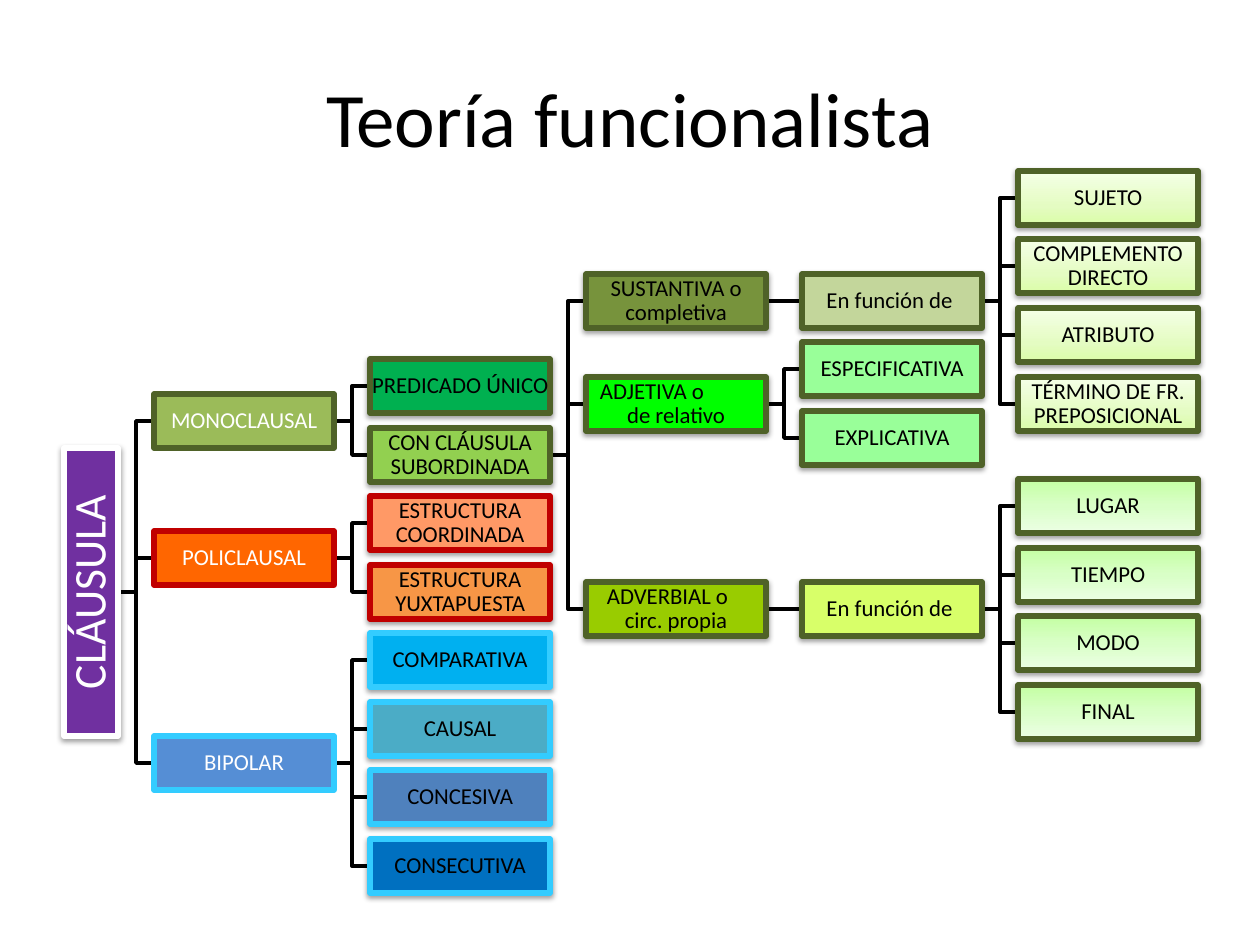
from copy import deepcopy
from dataclasses import dataclass
from typing import Iterator

from lxml.etree import SubElement
from pptx import Presentation
from pptx.dml.color import RGBColor
from pptx.enum.shapes import MSO_CONNECTOR, MSO_SHAPE
from pptx.enum.text import MSO_ANCHOR, PP_ALIGN
from pptx.oxml.ns import qn
from pptx.util import Emu, Pt

# Layout, in px (126 to the inch)
EMU_PER_PX = 914400 / 126
SLIDE_W, SLIDE_H = 1260, 945
BOX_W, BOX_H = 180, 54
ROOT_LENGTH, ROOT_CENTRE_X = 288, 91
FIRST_COLUMN, COLUMN_PITCH = 154, 216
FIRST_ROW, TWO_ROWS = 198, 137

COLORS = {
    "black": "000000", "white": "FFFFFF", "purple": "7030A0",
    "olive_line": "4F6228", "red_line": "C00000", "sky_line": "33CCFF",
    "mono": "9BBB59", "single": "00B050", "subordinate": "92D050",
    "noun": "77933C", "noun_role": "C3D69B", "adjective": "00FF00",
    "relative": "99FF99", "adverb": "99CC00", "adverb_role": "D8FF69",
    "poly": "FF6600", "coordinated": "FF9966", "juxtaposed": "F79646",
    "bipolar": "558ED5", "comparative": "00B0F0", "causal": "4BACC6",
    "concessive": "4F81BD", "consecutive": "0070C0",
    "lime_0": "DAFDA7", "lime_1": "E4FCC2", "lime_2": "F5FFE7",
    "mint_0": "C4FFA3", "mint_1": "D9FFC7", "mint_2": "ECFFE4",
}


@dataclass(frozen=True)
class Gradient:
    stops: tuple[tuple[float, str], ...]
    angle: int


LIME = Gradient(((0, "lime_0"), (0.35, "lime_1"), (1, "lime_2")), 90)
MINT = Gradient(((0, "mint_0"), (0.5, "mint_1"), (1, "mint_2")), 270)


@dataclass(frozen=True)
class Clause:
    """A tree node; leaves have a row, parents sit midway between their children."""
    text: str
    fill: str | Gradient
    line: str = "olive_line"
    children: tuple["Clause", ...] = ()
    leaf_row: float = 0
    ink: str = "black"
    shadow: bool = True
    first_line_indent: int = 0

    @property
    def row(self) -> float:
        if not self.children:
            return self.leaf_row
        return (self.children[0].row + self.children[-1].row) / 2

    @property
    def centre_y(self) -> int:
        return round(FIRST_ROW + TWO_ROWS * self.row / 2)


def leaves(start: float, line: str, *entries: tuple[str, str | Gradient]) -> tuple[Clause, ...]:
    return tuple(Clause(text, fill, line, leaf_row=start + i)
                 for i, (text, fill) in enumerate(entries))


# Content tree
noun_roles = leaves(0, "olive_line", *((text, LIME) for text in (
    "SUJETO", "COMPLEMENTO DIRECTO", "ATRIBUTO", "TÉRMINO DE FR. PREPOSICIONAL")))
adverb_roles = leaves(4.5, "olive_line", *((text, MINT) for text in (
    "LUGAR", "TIEMPO", "MODO", "FINAL")))
subordinates = (
    Clause("SUSTANTIVA o completiva", "noun",
           children=(Clause("En función de ", "noun_role", children=noun_roles),)),
    Clause("ADJETIVA o\nde relativo", "adjective", first_line_indent=13,
           children=leaves(2.5, "olive_line", ("ESPECIFICATIVA", "relative"),
                           ("EXPLICATIVA", "relative"))),
    Clause("ADVERBIAL o\ncirc. propia", "adverb", first_line_indent=20,
           children=(Clause("En función de ", "adverb_role", children=adverb_roles),)),
)
monoclausal = Clause("MONOCLAUSAL", "mono", ink="white", shadow=False, children=(
    Clause("PREDICADO ÚNICO", "single", leaf_row=2.75),
    Clause("CON CLÁUSULA SUBORDINADA", "subordinate", children=subordinates)))
policlausal = Clause("POLICLAUSAL", "poly", "red_line", ink="white", shadow=False,
                     children=leaves(4.75, "red_line",
                                     ("ESTRUCTURA COORDINADA", "coordinated"),
                                     ("ESTRUCTURA YUXTAPUESTA", "juxtaposed")))
bipolar = Clause("BIPOLAR", "bipolar", "sky_line", ink="white", shadow=False,
                 children=leaves(6.75, "sky_line", ("COMPARATIVA", "comparative"),
                                 ("CAUSAL", "causal"), ("CONCESIVA", "concessive"),
                                 ("CONSECUTIVA", "consecutive")))
root = Clause("CLÁUSULA", "purple", "white", ink="white",
              children=(monoclausal, policlausal, bipolar))


def px(length: int) -> Emu:
    return Emu(round(length * EMU_PER_PX))


def rgb(name: str) -> RGBColor:
    return RGBColor.from_string(COLORS[name])


def set_all(target, values: dict) -> None:
    for name, value in values.items():
        setattr(target, name, value)


def write(shape, text: str, size: int, ink: str, inset: int,
          spacing: float = 1, first_line_indent: int = 0) -> None:
    frame = shape.text_frame
    set_all(frame, {"word_wrap": True, "vertical_anchor": MSO_ANCHOR.MIDDLE,
                    **{f"margin_{side}": px(inset)
                       for side in ("left", "right", "top", "bottom")}})
    frame.text = text
    for paragraph in frame.paragraphs:
        set_all(paragraph, {"alignment": PP_ALIGN.CENTER, "line_spacing": spacing})
        set_all(paragraph.runs[0].font, {"name": "Calibri", "size": Pt(size)})
        paragraph.runs[0].font.color.rgb = rgb(ink)
    if first_line_indent:
        opening = frame.paragraphs[0]
        opening.alignment = PP_ALIGN.LEFT
        opening._p.get_or_add_pPr().set("marL", str(px(first_line_indent)))


def paint(shape, fill: str | Gradient) -> None:
    if isinstance(fill, str):
        shape.fill.solid()
        shape.fill.fore_color.rgb = rgb(fill)
        return
    shape.fill.gradient()
    shape.fill.gradient_angle = fill.angle
    stop_list = shape._element.spPr.find(".//" + qn("a:gsLst"))
    stop_list.append(deepcopy(stop_list[-1]))
    for stop, (position, color) in zip(shape.fill.gradient_stops, fill.stops):
        stop.position = position
        stop.color.rgb = rgb(color)


def add_shadow(shape) -> None:
    effects = shape._element.spPr.find(qn("a:effectLst"))
    outer = SubElement(effects, qn("a:outerShdw"), blurRad=str(Pt(3.1)),
                       dist=str(Pt(1.6)), dir="5400000", rotWithShape="0")
    color = SubElement(outer, qn("a:srgbClr"), val=COLORS["black"])
    SubElement(color, qn("a:alpha"), val="38000")


def right_edge(depth: int) -> int:
    if depth == 0:
        return ROOT_CENTRE_X + BOX_H // 2
    return left_edge(depth) + BOX_W


def left_edge(depth: int) -> int:
    return FIRST_COLUMN + COLUMN_PITCH * (depth - 1)


def walk(clause: Clause, depth: int = 0) -> Iterator[tuple[Clause, int]]:
    yield clause, depth
    for child in clause.children:
        yield from walk(child, depth + 1)


def draw_branch(shapes, parent: Clause, child: Clause, depth: int) -> None:
    level = parent.centre_y == child.centre_y
    branch = shapes.add_connector(
        MSO_CONNECTOR.STRAIGHT if level else MSO_CONNECTOR.ELBOW,
        px(right_edge(depth)), px(parent.centre_y),
        px(left_edge(depth + 1)), px(child.centre_y))
    branch.line.color.rgb = rgb("black")
    branch.line.width = Pt(2)
    SubElement(branch._element.spPr, qn("a:effectLst"))


def draw_clause(shapes, clause: Clause, depth: int) -> None:
    is_root = depth == 0
    width = ROOT_LENGTH if is_root else BOX_W
    left = ROOT_CENTRE_X - width // 2 if is_root else left_edge(depth)
    box = shapes.add_shape(MSO_SHAPE.RECTANGLE, px(left), px(clause.centre_y - BOX_H // 2),
                           px(width), px(BOX_H))
    box.rotation = 270 if is_root else 0
    box.shadow.inherit = False
    paint(box, clause.fill)
    box.line.color.rgb = rgb(clause.line)
    box.line.width = Pt(3)
    if clause.shadow:
        add_shadow(box)
    write(box, clause.text, 26 if is_root else 13, clause.ink, 2 if is_root else 1,
          0.9, clause.first_line_indent)


def main() -> None:
    deck = Presentation()
    set_all(deck, {"slide_width": px(SLIDE_W), "slide_height": px(SLIDE_H)})
    shapes = deck.slides.add_slide(deck.slide_layouts[6]).shapes

    # Title
    title = shapes.add_textbox(px(63), px(38), px(1134), px(158))
    write(title, "Teoría funcionalista", 44, "black", 6)

    # Branches lie behind the boxes
    for clause, depth in walk(root):
        for child in clause.children:
            draw_branch(shapes, clause, child, depth)
    for clause, depth in walk(root):
        draw_clause(shapes, clause, depth)

    deck.save("out.pptx")


if __name__ == "__main__":
    main()
